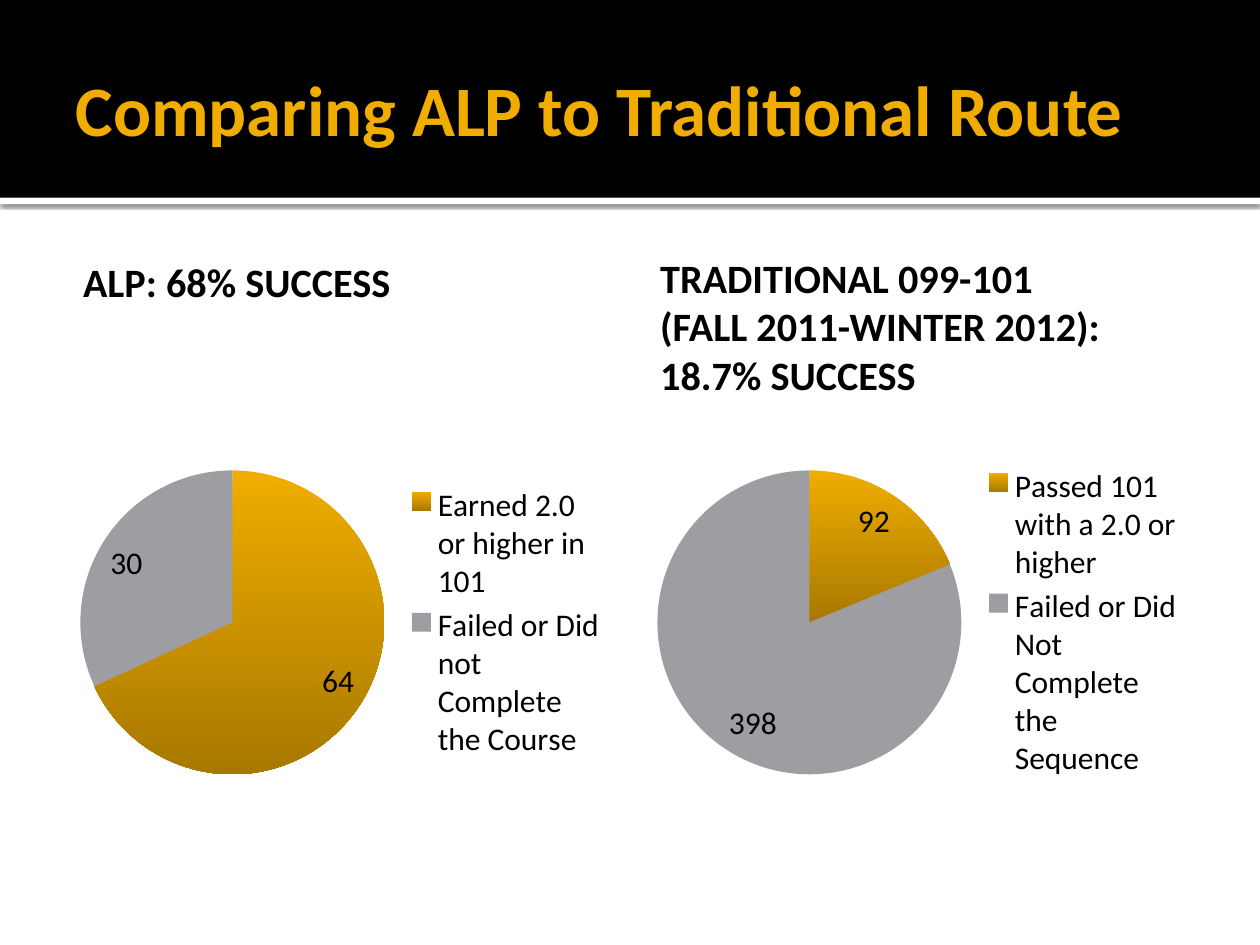
from dataclasses import dataclass

from lxml import etree
from pptx import Presentation
from pptx.chart.data import CategoryChartData
from pptx.dml.color import RGBColor
from pptx.enum.chart import XL_CHART_TYPE, XL_LABEL_POSITION, XL_LEGEND_POSITION
from pptx.enum.shapes import MSO_SHAPE
from pptx.enum.text import MSO_ANCHOR, MSO_AUTO_SIZE, PP_ALIGN
from pptx.oxml import parse_xml
from pptx.oxml.ns import nsdecls, qn
from pptx.util import Inches, Pt

PIE = XL_CHART_TYPE.PIE
INSIDE_END = XL_LABEL_POSITION.INSIDE_END
LEGEND_RIGHT = XL_LEGEND_POSITION.RIGHT
RECTANGLE = MSO_SHAPE.RECTANGLE
MIDDLE = MSO_ANCHOR.MIDDLE
NO_AUTOFIT = MSO_AUTO_SIZE.NONE
LEFT = PP_ALIGN.LEFT

FONT = "Calibri"
GOLD, DARK_GOLD, GRAY = "F0AD00", "A87900", "9D9DA2"
BLACK, WHITE = "000000", "FFFFFF"
COMPARISON_LAYOUT = 4
COLUMN_WIDTH = 4.42


@dataclass
class Route:
    heading: str
    heading_index: int
    left: float
    heading_top: float
    categories: tuple[str, str]
    counts: tuple[int, int]


ROUTES = [
    Route("ALP: 68% SUCCESS", 1, 0.5, 1.86,
          ("Earned 2.0 or higher in 101", "Failed or Did not Complete the Course"),
          (64, 30)),
    Route("TRADITIONAL 099-101\n(FALL 2011-WINTER 2012): 18.7% SUCCESS", 3, 5.08, 2.21,
          ("Passed 101 with a 2.0 or higher", "Failed or Did Not Complete the Sequence"),
          (92, 398)),
]


def color(value: str) -> RGBColor:
    return RGBColor.from_string(value)


def set_font(font, size: float, value: str, bold: bool = False) -> None:
    font.name = FONT
    font.size = Pt(size)
    font.bold = bold
    font.color.rgb = color(value)


def place(shape, left: float, top: float, width: float, height: float) -> None:
    shape.left, shape.top = Inches(left), Inches(top)
    shape.width, shape.height = Inches(width), Inches(height)


def write(shape, text: str, size: float, value: str, insets: tuple[float, ...]) -> None:
    """Fill a placeholder with bold text; insets run left, top, right, bottom."""
    frame = shape.text_frame
    frame.text = text
    frame.word_wrap = True
    frame.auto_size = NO_AUTOFIT
    frame.vertical_anchor = MIDDLE
    (frame.margin_left, frame.margin_top,
     frame.margin_right, frame.margin_bottom) = map(Inches, insets)
    for paragraph in frame.paragraphs:
        paragraph.alignment = LEFT
        paragraph.space_before = Pt(0)
        for run in paragraph.runs:
            set_font(run.font, size, value, bold=True)


def add_band(slide, top: float, height: float, value: str):
    """Add a full-width band behind everything already on the slide."""
    band = slide.shapes.add_shape(RECTANGLE, 0, Inches(top), Inches(10), Inches(height))
    band.shadow.inherit = False
    band.fill.solid()
    band.fill.fore_color.rgb = color(value)
    band.line.fill.background()
    slide.shapes._spTree.insert(2, band._element)
    return band


def add_soft_shadow(shape) -> None:
    effects = shape._element.spPr.find(qn("a:effectLst"))
    shadow = etree.SubElement(effects, qn("a:outerShdw"), blurRad=str(Pt(2.5)),
                              dist=str(Pt(0.8)), dir="5400000", algn="t", rotWithShape="0")
    shadow.append(parse_xml(
        f'<a:srgbClr {nsdecls("a")} val="{BLACK}"><a:alpha val="60000"/></a:srgbClr>'))


def add_pie(slide, route: Route) -> None:
    data = CategoryChartData()
    data.categories = route.categories
    data.add_series("Series 1", route.counts)
    chart = slide.shapes.add_chart(PIE, Inches(route.left), Inches(2.78),
                                   Inches(COLUMN_WIDTH), Inches(4.32), data).chart
    set_font(chart.font, 18, BLACK)
    chart.has_title = False
    chart.has_legend = True
    chart.legend.position = LEGEND_RIGHT
    chart.legend.include_in_layout = False

    plot = chart.plots[0]
    plot.vary_by_categories = True
    plot.has_data_labels = True
    plot.data_labels.show_value = True
    plot.data_labels.show_percentage = False
    plot.data_labels.position = INSIDE_END

    success, failure = (plot.series[0].points[index].format for index in range(2))
    success.fill.gradient()
    success.fill.gradient_angle = 270
    for stop, value in zip(success.fill.gradient_stops, (GOLD, DARK_GOLD)):
        stop.color.rgb = color(value)
    failure.fill.solid()
    failure.fill.fore_color.rgb = color(GRAY)
    for slice_format in (success, failure):
        slice_format.line.fill.background()


def main() -> None:
    presentation = Presentation()
    presentation.slide_width, presentation.slide_height = Inches(10), Inches(7.5)
    slide = presentation.slides.add_slide(presentation.slide_layouts[COMPARISON_LAYOUT])
    placeholders = {shape.placeholder_format.idx: shape for shape in slide.placeholders}

    add_band(slide, 0, 1.57, BLACK)
    add_soft_shadow(add_band(slide, 1.57, 0.05, WHITE))

    title = placeholders.pop(0)
    place(title, 0.5, 0.17, 9, 1.37)
    write(title, "Comparing ALP to Traditional Route", 40.5, GOLD, (0.1, 0.05, 0.05, 0.05))

    for route in ROUTES:
        heading = placeholders.pop(route.heading_index)
        place(heading, route.left, route.heading_top, COLUMN_WIDTH, 0.7)
        write(heading, route.heading, 23, BLACK, (0.16, 0.1, 0.1, 0.05))
        add_pie(slide, route)

    for unused in placeholders.values():
        slide.shapes._spTree.remove(unused._element)

    presentation.save("out.pptx")


if __name__ == "__main__":
    main()
